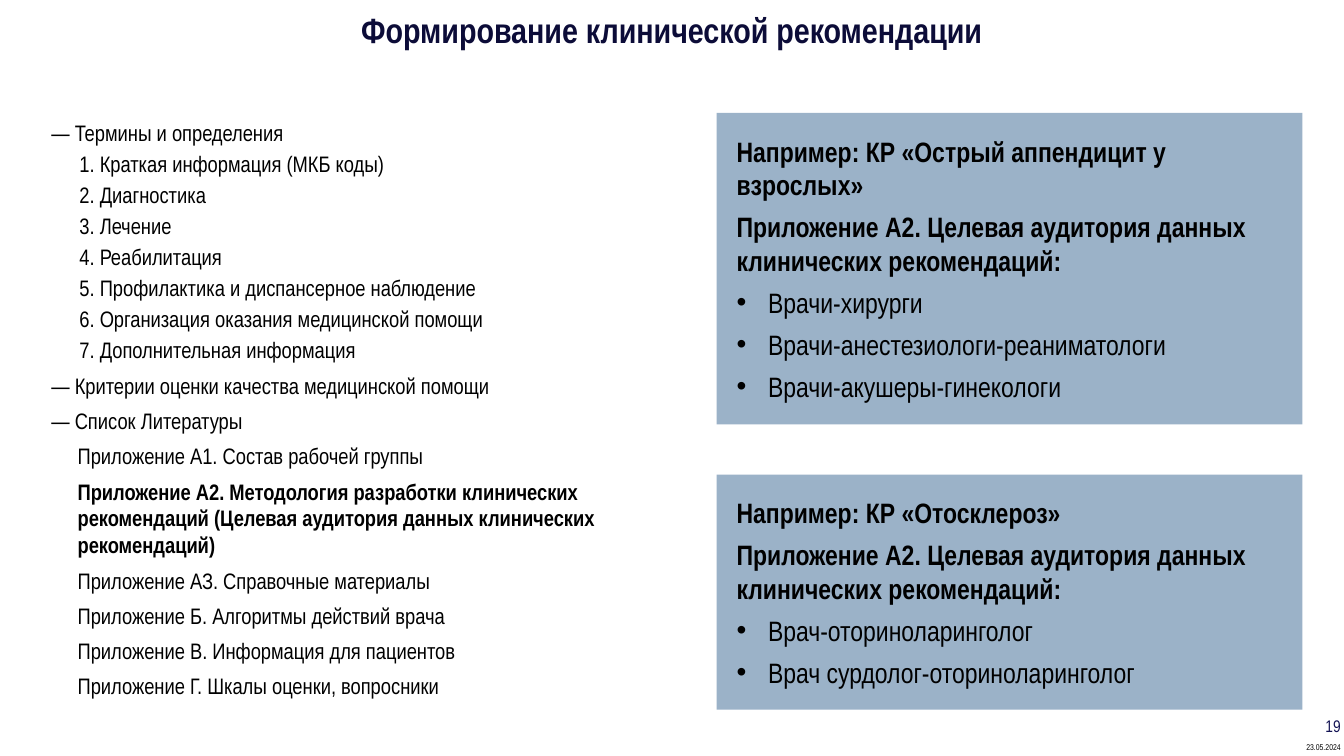
from dataclasses import dataclass

from lxml.etree import SubElement
from pptx import Presentation
from pptx.dml.color import RGBColor
from pptx.enum.shapes import MSO_SHAPE as Shape
from pptx.enum.text import MSO_ANCHOR as Anchor, MSO_AUTO_SIZE as AutoSize, PP_ALIGN as Align
from pptx.oxml.ns import qn
from pptx.util import Pt

FONT = "Arial Narrow"
COLORS = {"text": "000000", "title": "0C0C38", "number": "131354", "card": "9BB2C8"}


@dataclass
class Line:
    text: str
    size: float = 16
    bold: bool = False
    color: str = "text"
    after: float = 0
    left: float = 0
    bullet: bool = False
    align: Align = Align.LEFT


@dataclass
class Card:
    top: float
    height: float
    example: str
    doctors: list[str]


CHAPTERS = [
    "Краткая информация (МКБ коды)",
    "Диагностика",
    "Лечение",
    "Реабилитация",
    "Профилактика и диспансерное наблюдение",
    "Организация оказания медицинской помощи",
    "Дополнительная информация",
]
APPENDICES = [
    "А1. Состав рабочей группы",
    "А2. Методология разработки клинических рекомендаций "
    "(Целевая аудитория данных клинических рекомендаций)",
    "АЗ. Справочные материалы",
    "Б. Алгоритмы действий врача",
    "В. Информация для пациентов",
    "Г. Шкалы оценки, вопросники",
]
AUDIENCE = "Приложение А2. Целевая аудитория данных клинических рекомендаций:"
CARDS = [
    Card(80.6, 222.5, "Например: КР «Острый аппендицит у взрослых»",
         ["Врачи-хирурги", "Врачи-анестезиологи-реаниматологи", "Врачи-акушеры-гинекологи"]),
    Card(339.1, 167.8, "Например: КР «Отосклероз»",
         ["Врач-оториноларинголог", "Врач сурдолог-оториноларинголог"]),
]


def rgb(name: str) -> RGBColor:
    return RGBColor.from_string(COLORS[name])


def place(sp, left: float, top: float, width: float, height: float) -> None:
    sp.left, sp.top, sp.width, sp.height = Pt(left), Pt(top), Pt(width), Pt(height)


def write(sp, lines: list[Line], margins: tuple[float, float, float, float],
          anchor: Anchor = Anchor.MIDDLE, wrap: bool = True) -> None:
    tf = sp.text_frame
    tf.word_wrap, tf.auto_size, tf.vertical_anchor = wrap, AutoSize.NONE, anchor
    tf.margin_left, tf.margin_top, tf.margin_right, tf.margin_bottom = map(Pt, margins)
    for i, line in enumerate(lines):
        p = tf.paragraphs[0] if i == 0 else tf.add_paragraph()
        pPr = p._p.get_or_add_pPr()
        pPr.set("marL", str(Pt(line.left)))
        pPr.set("indent", str(Pt(-line.left if line.bullet else 0)))
        if line.bullet:
            SubElement(pPr, qn("a:buFont")).set("typeface", "Arial")
            SubElement(pPr, qn("a:buChar")).set("char", "•")
        else:
            SubElement(pPr, qn("a:buNone"))
        p.alignment, p.line_spacing = line.align, 1.0
        p.space_before, p.space_after = Pt(0), Pt(line.after)
        r = p.add_run()
        r.text = line.text
        r.font.name, r.font.size, r.font.bold = FONT, Pt(line.size), line.bold
        r.font.color.rgb = rgb(line.color)


def contents() -> list[Line]:
    chapters = [Line(f"{n}. {name}", left=20, after=6 if n == len(CHAPTERS) else 3)
                for n, name in enumerate(CHAPTERS, 1)]
    appendices = [Line(f"Приложение {name}", left=18.7, after=6, bold=name.startswith("А2"))
                  for name in APPENDICES]
    return [Line("— Термины и определения", after=3), *chapters,
            Line("— Критерии оценки качества медицинской помощи", after=6),
            Line("— Список Литературы", after=6), *appendices]


def add_card(s, card: Card) -> None:
    sp = s.shapes.add_shape(Shape.RECTANGLE, Pt(511.9), Pt(card.top), Pt(418.3), Pt(card.height))
    sp.shadow.inherit = False
    sp.fill.solid()
    sp.fill.fore_color.rgb = rgb("card")
    sp.line.fill.background()
    heads = [Line(text, 20, True, after=6) for text in (card.example, AUDIENCE)]
    doctors = [Line(text, 20, after=6, left=22.5, bullet=True) for text in card.doctors]
    write(sp, heads + doctors, (14.2,) * 4)


def add_label(s, top: float, height: float, line: Line, bottom: float,
              anchor: Anchor, wrap: bool) -> None:
    sp = s.shapes.add_textbox(Pt(929.5), Pt(top), Pt(31), Pt(height))
    write(sp, [line], (2.8, 2.8, 2.8, bottom), anchor, wrap)


def main() -> None:
    """Build the slide on forming a clinical guideline."""
    prs = Presentation()
    prs.slide_width, prs.slide_height = Pt(960), Pt(540)
    s = prs.slides.add_slide(prs.slide_layouts[1])
    title, body = s.shapes.title, s.placeholders[1]
    place(title, 12.2, 0, 935.3, 41.8)
    write(title, [Line("Формирование клинической рекомендации", 25, True, "title",
                       align=Align.CENTER)], (5.7,) * 4)
    place(body, 29.5, 81.4, 418.3, 426.2)
    write(body, contents(), (7.2, 3.6, 7.2, 3.6), Anchor.TOP)
    for card in CARDS:
        add_card(s, card)
    add_label(s, 508.5, 17.2, Line("19", 12, color="number", align=Align.RIGHT),
              0, Anchor.MIDDLE, True)
    add_label(s, 527, 13, Line("23.05.2024", 6, align=Align.RIGHT), 2.8, Anchor.TOP, False)
    prs.save("out.pptx")


if __name__ == "__main__":
    main()
